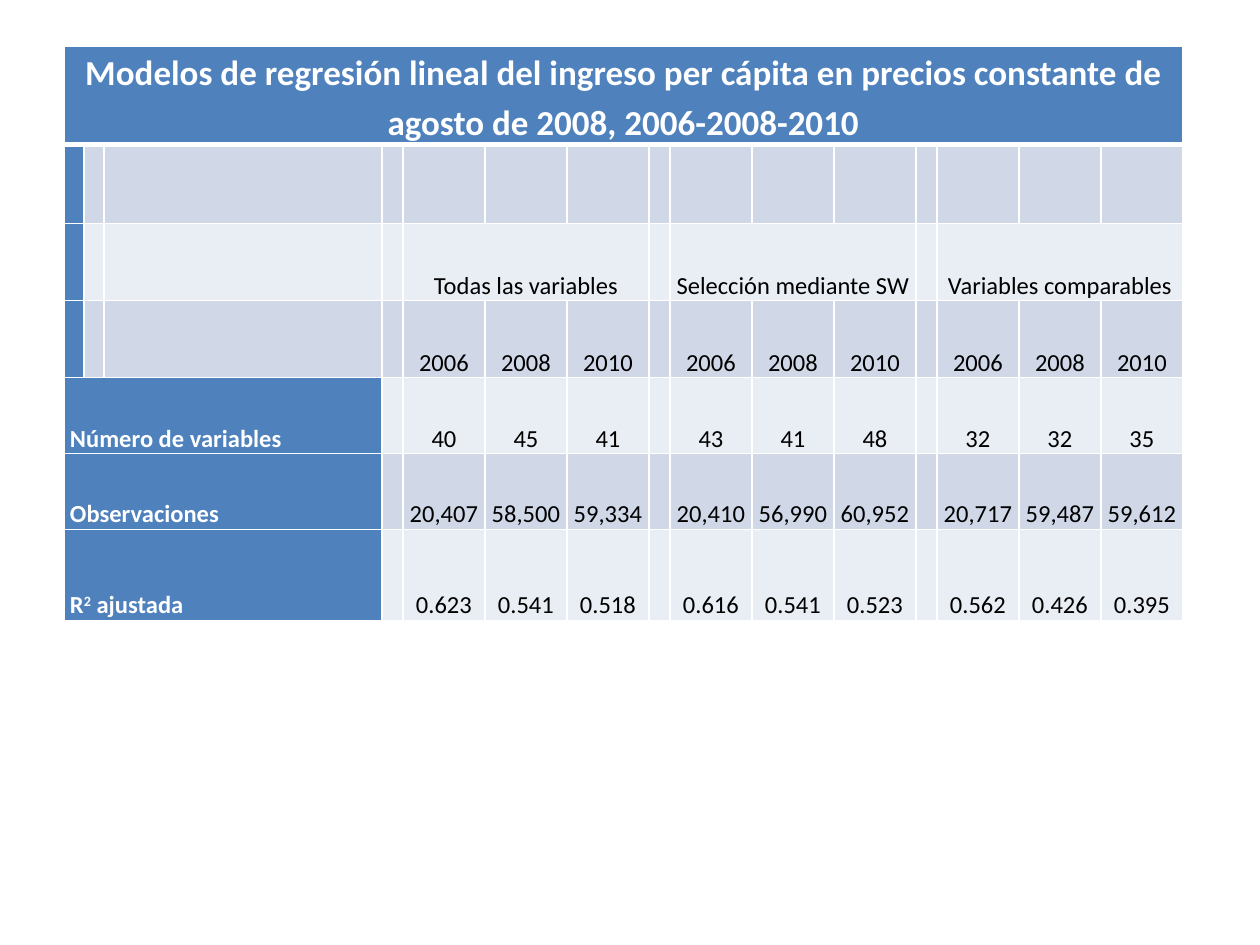
from lxml import etree
from pptx import Presentation
from pptx.dml.color import RGBColor
from pptx.enum.text import MSO_ANCHOR, PP_ALIGN
from pptx.oxml.ns import qn
from pptx.util import Pt

LEFT, MID = PP_ALIGN.LEFT, PP_ALIGN.CENTER
LOW = MSO_ANCHOR.BOTTOM
PX = 914400 / 126
BLUE, BAND, PALE = "4F81BD", "D0D8E8", "E9EDF4"
WHITE, BLACK = "FFFFFF", "000000"

TITLE = ("Modelos de regresión lineal del ingreso per cápita en precios "
         "constante de agosto de 2008, 2006-2008-2010")
GROUPS = ["Todas las variables", "Selección mediante SW", "Variables comparables"]
YEARS = ["2006", "2008", "2010"]
ROWS = [
    (["Número de variables"], "40 45 41 43 41 48 32 32 35"),
    (["Observaciones"],
     "20,407 58,500 59,334 20,410 56,990 60,952 20,717 59,487 59,612"),
    (["R", "2", " ajustada"],
     "0.623 0.541 0.518 0.616 0.541 0.523 0.562 0.426 0.395"),
]
GROUP = [21, 82, 82, 82]
WIDTHS = [20, 20, 278] + GROUP * 3
HEIGHTS = [79, 79, 77, 77, 76, 76, 91]
STARTS = [4, 8, 12]
SPOTS = [start + step for start in STARTS for step in range(3)]


def emu(px):
    return round(px * PX)


def tint(code):
    return RGBColor.from_string(code)


def write(cell, parts, size=14, color=BLACK, bold=False, align=MID):
    """Fill a cell with text runs, every second one raised."""
    para = cell.text_frame.paragraphs[0]
    para.alignment = align
    para.line_spacing = 1.15
    for spot, part in enumerate(parts):
        run = para.add_run()
        run.text = part
        font = run.font
        font.name, font.size, font.bold = "Calibri", Pt(size), bold
        font.color.rgb = tint(color)
        if spot % 2:
            run._r.get_or_add_rPr().set("baseline", "30000")


class Deck:
    """Hold the style and the current slide."""

    def __init__(self, wide, high):
        self.file = Presentation()
        self.file.slide_width, self.file.slide_height = emu(wide), emu(high)
        self.slide = self.file.slides.add_slide(self.file.slide_layouts[6])

    def grid(self, left, top, widths, heights):
        frame = self.slide.shapes.add_table(
            len(heights), len(widths), emu(left), emu(top),
            emu(sum(widths)), emu(sum(heights)))
        table = frame.table
        table.first_row = table.horz_banding = False
        for col, width in zip(table.columns, widths):
            col.width = emu(width)
        for row, height in zip(table.rows, heights):
            row.height = emu(height)
        return table

    def edge(self, cell, side, width):
        line = etree.SubElement(cell._tc.get_or_add_tcPr(), qn("a:ln" + side),
                                w=str(Pt(width)))
        fill = etree.SubElement(line, qn("a:solidFill"))
        etree.SubElement(fill, qn("a:srgbClr"), val=WHITE)

    def paint(self, cell, color, top=1, bottom=1):
        for side, width in zip("LRTB", (1, 1, top, bottom)):
            self.edge(cell, side, width)
        cell.fill.solid()
        cell.fill.fore_color.rgb = tint(color)
        cell.margin_left = cell.margin_right = emu(6)
        cell.margin_top = cell.margin_bottom = 0
        cell.vertical_anchor = LOW

    def span(self, table, row, col, count):
        cell = table.cell(row, col)
        cell.merge(table.cell(row, col + count - 1))
        return cell


def main():
    deck = Deck(1260, 945)
    table = deck.grid(64, 46, WIDTHS, HEIGHTS)
    for row in range(len(HEIGHTS)):
        for col in range(len(WIDTHS)):
            head = row == 0 or col == 0 or (row > 3 and col < 3)
            color = BLUE if head else BAND if row % 2 else PALE
            deck.paint(table.cell(row, col), color,
                       top=3 if row == 1 else 1, bottom=3 if row == 0 else 1)

    write(deck.span(table, 0, 0, len(WIDTHS)), [TITLE],
          size=20, color=WHITE, bold=True)
    for col, name in zip(STARTS, GROUPS):
        write(deck.span(table, 2, col, 3), [name])
    for col, year in zip(SPOTS, YEARS * 3):
        write(table.cell(3, col), [year])
    for row, (label, values) in enumerate(ROWS, 4):
        write(deck.span(table, row, 0, 3), label,
              color=WHITE, bold=True, align=LEFT)
        for col, value in zip(SPOTS, values.split()):
            write(table.cell(row, col), [value])
    deck.file.save("out.pptx")


if __name__ == "__main__":
    main()
